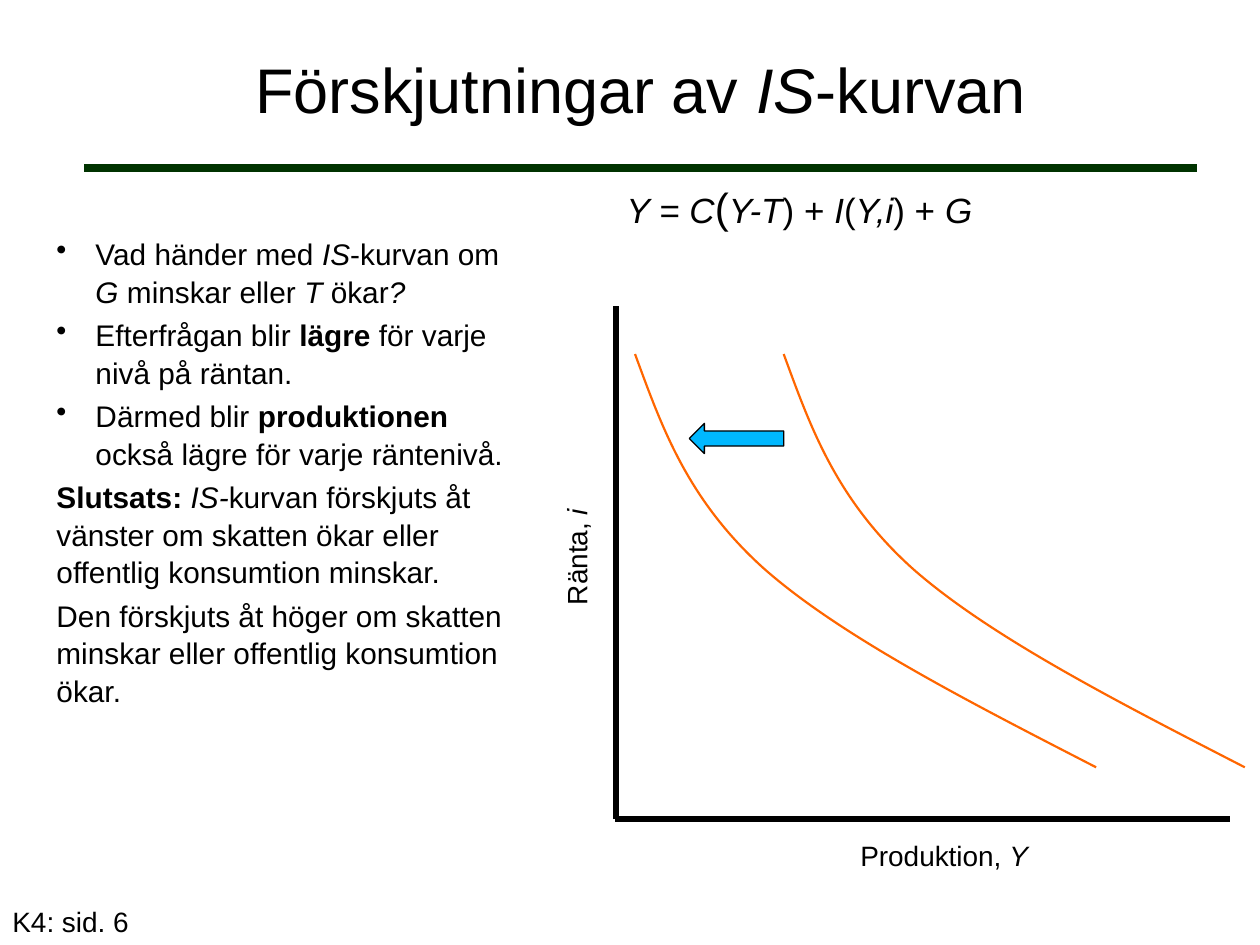
from dataclasses import dataclass

import lxml.etree
import pptx
import pptx.dml.color
import pptx.enum.shapes
import pptx.enum.text
import pptx.oxml.ns
import pptx.util

Inches = pptx.util.Inches
Pt = pptx.util.Pt
qn = pptx.oxml.ns.qn
ALIGN = pptx.enum.text.PP_ALIGN
ANCHOR = pptx.enum.text.MSO_ANCHOR


def rgb(value: str) -> pptx.dml.color.RGBColor:
    return pptx.dml.color.RGBColor.from_string(value)


@dataclass(frozen=True)
class Theme:
    font: str = "Arial"
    ink: str = "000000"
    rule: str = "003300"
    curve: str = "FF6600"
    arrow: str = "00B8FF"
    title: float = 36
    formula: float = 20
    paren: float = 24
    body: float = 17
    label: float = 16


THEME = Theme()


@dataclass(frozen=True)
class Span:
    text: str
    italic: bool = False
    bold: bool = False
    size: float | None = None


@dataclass(frozen=True)
class Para:
    spans: tuple[Span, ...]
    bullet: bool = False


@dataclass(frozen=True)
class Label:
    spans: tuple[Span, ...]
    box: tuple[float, float, float, float]
    size: float = THEME.label
    align: ALIGN = ALIGN.LEFT
    wrap: bool = False
    rotation: float = 0


@dataclass(frozen=True)
class Rule:
    start: tuple[float, float]
    end: tuple[float, float]
    color: str
    width: float


def it(text: str) -> Span:
    return Span(text, italic=True)


def bold(text: str) -> Span:
    return Span(text, bold=True)


TITLE = (Span("Förskjutningar av "), it("IS"), Span("-kurvan"))
BODY = (
    Para((Span("Vad händer med "), it("IS"), Span("-kurvan om "), it("G "),
          Span("minskar eller "), it("T "), Span("ökar"), it("?")), bullet=True),
    Para((Span("Efterfrågan blir "), bold("lägre "),
          Span("för varje nivå på räntan.")), bullet=True),
    Para((Span("Därmed blir "), bold("produktionen "),
          Span("också lägre för varje räntenivå.")), bullet=True),
    Para((bold("Slutsats: "), it("IS-"),
          Span("kurvan förskjuts åt vänster om skatten ökar eller "
               "offentlig konsumtion minskar."))),
    Para((Span("Den förskjuts åt höger om skatten minskar eller "
               "offentlig konsumtion ökar."),)),
)
LABELS = (
    Label((Span("K4: sid. 6"),), (0, 7.13, 2.08, 0.37), wrap=True),
    Label((Span("Ränta, "), it("i")), (4.09, 4.23, 0.97, 0.37), rotation=270),
    Label((Span("Produktion, "), it("Y")), (6.73, 6.61, 1.54, 0.37)),
    Label((it("Y = C"), Span("(", size=THEME.paren), it("Y-T"), Span(") + "),
           it("I"), Span("("), it("Y,i"), Span(") + "), it("G")),
          (4.84, 1.39, 3.01, 0.5), THEME.formula, ALIGN.CENTER, wrap=True),
)
RULES = (
    Rule((0.67, 1.33), (9.5, 1.33), THEME.rule, 4.5),
    Rule((4.88, 6.5), (9.76, 6.5), THEME.ink, 3),
    Rule((4.89, 6.5), (4.89, 2.43), THEME.ink, 3),
)
# Start point, then two cubic segments of three points each
IS_CURVE = ((5.04, 2.81), (5.25, 3.38), (5.45, 3.96), (6.06, 4.51),
            (6.67, 5.05), (7.69, 5.57), (8.7, 6.09))
CURVE_SHIFTS = (1.18, 0)


def write_spans(p, spans: tuple[Span, ...], size: float) -> None:
    for span in spans:
        r = p.add_run()
        r.text = span.text
        r.font.name = THEME.font
        r.font.size = Pt(span.size or size)
        r.font.italic = span.italic
        r.font.bold = span.bold
        r.font.color.rgb = rgb(THEME.ink)


def place(sp, box: tuple[float, float, float, float]) -> None:
    sp.left, sp.top, sp.width, sp.height = map(Inches, box)


def add_title(slide) -> None:
    sp = slide.shapes.title
    place(sp, (0.67, 0.08, 8.83, 1.24))
    tf = sp.text_frame
    tf.vertical_anchor = ANCHOR.MIDDLE
    tf.paragraphs[0].alignment = ALIGN.CENTER
    write_spans(tf.paragraphs[0], TITLE, THEME.title)


def add_body(slide) -> None:
    tf = slide.shapes.add_textbox(*map(Inches, (0.35, 1.81, 3.86, 5.05))).text_frame
    tf.word_wrap = True
    for i, para in enumerate(BODY):
        p = tf.add_paragraph() if i else tf.paragraphs[0]
        p.line_spacing = 1.05
        p.space_before = p.space_after = Pt(THEME.body * 0.1)
        if para.bullet:
            props = p._p.get_or_add_pPr()
            props.set("marL", str(Inches(0.31)))
            props.set("indent", str(-Inches(0.31)))
            lxml.etree.SubElement(props, qn("a:buChar")).set("char", "•")
        write_spans(p, para.spans, THEME.body)


def add_label(slide, label: Label) -> None:
    sp = slide.shapes.add_textbox(*map(Inches, label.box))
    sp.rotation = label.rotation
    tf = sp.text_frame
    tf.word_wrap = label.wrap
    p = tf.paragraphs[0]
    p.alignment = label.align
    write_spans(p, label.spans, label.size)


def add_rule(slide, rule: Rule) -> None:
    line = slide.shapes.add_connector(
        pptx.enum.shapes.MSO_CONNECTOR.STRAIGHT,
        *map(Inches, rule.start + rule.end))
    line.line.color.rgb = rgb(rule.color)
    line.line.width = Pt(rule.width)
    lxml.etree.SubElement(line._element.spPr, qn("a:effectLst"))


def add_curve(slide, shift: float) -> None:
    """Draw the IS curve, turning each three line segments into one cubic."""
    points = [(Inches(x + shift), Inches(y)) for x, y in IS_CURVE]
    builder = slide.shapes.build_freeform(*points[0])
    builder.add_line_segments(points[1:], close=False)
    sp = builder.convert_to_shape()
    outline = next(sp._element.iter(qn("a:path")))
    segments = outline.findall(qn("a:lnTo"))
    for i in range(0, len(segments), 3):
        cubic = lxml.etree.SubElement(outline, qn("a:cubicBezTo"))
        for segment in segments[i:i + 3]:
            cubic.append(segment[0])
            outline.remove(segment)
    sp.shadow.inherit = False
    sp.fill.background()
    sp.line.color.rgb = rgb(THEME.curve)
    sp.line.width = Pt(1.25)


def add_shift_arrow(slide) -> None:
    sp = slide.shapes.add_shape(pptx.enum.shapes.MSO_SHAPE.RIGHT_ARROW,
                                *map(Inches, (5.47, 3.36, 0.75, 0.24)))
    sp.rotation = 180
    sp.shadow.inherit = False
    sp.fill.solid()
    sp.fill.fore_color.rgb = rgb(THEME.arrow)
    sp.line.color.rgb = rgb(THEME.ink)
    sp.line.width = Pt(0.75)


def main() -> None:
    prs = pptx.Presentation()
    prs.slide_width, prs.slide_height = Inches(10), Inches(7.5)
    slide = prs.slides.add_slide(prs.slide_layouts.get_by_name("Title Only"))
    add_title(slide)
    add_body(slide)
    for rule in RULES:
        add_rule(slide, rule)
    for label in LABELS:
        add_label(slide, label)
    for shift in CURVE_SHIFTS:
        add_curve(slide, shift)
    add_shift_arrow(slide)
    prs.save("out.pptx")


if __name__ == "__main__":
    main()
